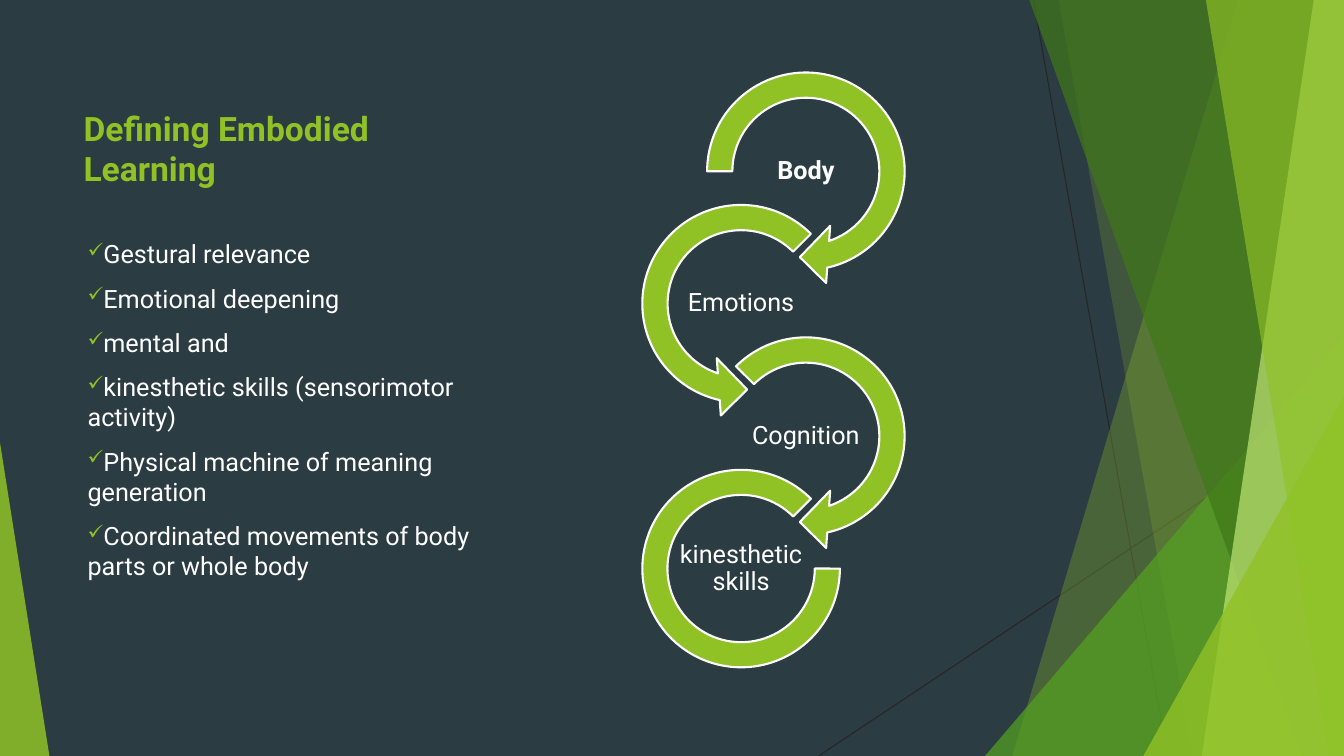
from dataclasses import dataclass

from pptx import Presentation
from pptx.dml.color import RGBColor as RGB
from pptx.enum.shapes import MSO_CONNECTOR as Link, MSO_SHAPE as Kind
from pptx.enum.text import MSO_ANCHOR as Anchor, PP_ALIGN as Align
from pptx.oxml.ns import qn
from pptx.util import Inches, Pt
from lxml.etree import SubElement as Sub

WIDE, HIGH = Inches(13.33), Inches(7.5)
COL, ROW = WIDE / 100, HIGH / 100


@dataclass(frozen=True)
class Theme:
    """Colours and type sizes of the slide."""
    back: str = "2C3C43"
    lime: str = "90C226"
    leaf: str = "54A021"
    moss: str = "3F7819"
    pale: str = "C0E474"
    ink: str = "262626"
    white: str = "FFFFFF"
    font: str = "Roboto"
    head: int = 24
    text: int = 18


@dataclass(frozen=True)
class Box:
    """A rectangle in EMU."""
    x: float
    y: float
    w: float
    h: float

    def ints(self):
        """Return the four lengths as whole numbers."""
        return [round(v) for v in (self.x, self.y, self.w, self.h)]


THEME = Theme()


def grid(col, row, cols, rows):
    """Return the box covering part of the 100 by 100 slide grid."""
    return Box(col * COL, row * ROW, cols * COL, rows * ROW)


def paint(shape, color, alpha=100, edge=None):
    """Fill a shape, with optional transparency and outline."""
    shape.shadow.inherit = False
    shape.fill.solid()
    shape.fill.fore_color.rgb = RGB.from_string(color)
    if alpha < 100:
        tint = shape.fill._xPr.find(qn("a:solidFill"))[0]
        Sub(tint, qn("a:alpha"), val=str(alpha * 1000))
    if edge:
        shape.line.color.rgb = RGB.from_string(edge)
        shape.line.width = Pt(1.5)
    else:
        shape.line.fill.background()


def style(para, size, color, bold=False):
    """Set the font of a paragraph."""
    font = para.font
    font.name, font.size, font.bold = THEME.font, Pt(size), bold
    font.color.rgb = RGB.from_string(color)


def frame(slide, box, anchor, inset=None):
    """Add a wrapping text box and return its text frame."""
    area = slide.shapes.add_textbox(*box.ints()).text_frame
    area.word_wrap, area.vertical_anchor = True, anchor
    if inset is not None:
        area.margin_left = area.margin_right = inset
        area.margin_top = area.margin_bottom = inset
    return area


def ray(slide, box, start, end):
    """Draw a thin line between two points given as percent of a box."""
    ends = [round(v) for x, y in (start, end)
            for v in (box.x + box.w * x / 100, box.y + box.h * y / 100)]
    line = slide.shapes.add_connector(Link.STRAIGHT, *ends)
    line.line.color.rgb = RGB.from_string(THEME.ink)
    line.line.width = Pt(0.75)
    Sub(line._element.spPr, qn("a:effectLst"))


def shard(slide, box, top, foot, color, alpha):
    """Fill a box to the right of a slanting edge."""
    points = [(round(box.x + box.w * x / 100), round(box.y + box.h * y))
              for x, y in ((top, 0), (100, 0), (100, 1), (foot, 1))]
    path = slide.shapes.build_freeform(*points[0], scale=1.0)
    path.add_line_segments(points[1:], close=True)
    paint(path.convert_to_shape(), color, alpha)


def wedge(slide, box, left, right, top, peak, color, alpha):
    """Stand a right triangle on the foot of a box."""
    part = Box(box.x + box.w * left / 100, box.y + box.h * top / 100,
               box.w * (right - left) / 100, box.h * (100 - top) / 100)
    shape = slide.shapes.add_shape(Kind.ISOSCELES_TRIANGLE, *part.ints())
    shape.adjustments[0] = peak
    paint(shape, color, alpha)


def facets(slide, box):
    """Draw the faceted backdrop from back to front."""
    ray(slide, box, (76.9, 0), (86.87, 100))
    ray(slide, box, (100, 53.73), (60.9, 100))
    shard(slide, box, 92.12, 75.32, THEME.lime, 30)
    shard(slide, box, 78.77, 88.75, THEME.lime, 20)
    wedge(slide, box, 73.29, 100, 44.4, 1, THEME.leaf, 72)
    shard(slide, box, 76.59, 96.85, THEME.moss, 70)
    shard(slide, box, 97.75, 89.42, THEME.pale, 70)
    shard(slide, box, 89.72, 98.87, THEME.lime, 65)
    wedge(slide, box, 85.07, 100, 52.4, 1, THEME.lime, 80)
    wedge(slide, box, 0, 3.68, 58.53, 0, THEME.lime, 85)


def title(slide, box, words):
    """Write the heading on the foot of a box."""
    para = frame(slide, box, Anchor.BOTTOM).paragraphs[0]
    para.text = words
    style(para, THEME.head, THEME.lime, True)


def checks(slide, box, items):
    """Write a list with tick bullets."""
    area = frame(slide, box, Anchor.TOP)
    for i, item in enumerate(items):
        para = area.add_paragraph() if i else area.paragraphs[0]
        para.text = item
        para.space_before = Pt(10 if i else 0)
        props = para._p.get_or_add_pPr()
        tint = Sub(props, qn("a:buClr"))
        Sub(tint, qn("a:srgbClr"), val=THEME.lime)
        Sub(props, qn("a:buSzPct"), val="80000")
        Sub(props, qn("a:buChar"), char="✓")
        style(para, THEME.text, THEME.white)


def chain(slide, box, links):
    """Draw a zigzag chain of labelled rings down a box."""
    ring = box.w * 0.78
    step = (box.h - ring) / (len(links) - 1)
    for i, (label, kind, share, turns, bold) in enumerate(links):
        midx = box.x + (ring / 2 if i % 2 else box.w - ring / 2)
        midy = box.y + ring / 2 + i * step
        size = ring * share
        part = Box(midx - size / 2, midy - size / 2, size, size)
        shape = slide.shapes.add_shape(kind, *part.ints())
        for j, turn in enumerate(turns):
            shape.adjustments[j] = turn
        paint(shape, THEME.lime, edge=THEME.white)
        wide, high = ring * 0.56, ring * 0.28
        spot = Box(midx - wide / 2, midy - high / 2, wide, high)
        para = frame(slide, spot, Anchor.MIDDLE, Inches(0.01)).paragraphs[0]
        para.text, para.alignment, para.line_spacing = label, Align.CENTER, 0.9
        style(para, THEME.text, THEME.white, bold)


def main():
    """Build and save the slide."""
    deck = Presentation()
    deck.slide_width, deck.slide_height = WIDE, HIGH
    slide = deck.slides.add_slide(deck.slide_layouts[6])
    slide.background.fill.solid()
    slide.background.fill.fore_color.rgb = RGB.from_string(THEME.back)
    facets(slide, grid(0, 0, 100, 100))
    title(slide, grid(5.48, 6.93, 31.66, 18.67), "Defining Embodied Learning")
    chain(slide, grid(46.6, 7.47, 21.91, 82.93), [
        ("Body", Kind.CIRCULAR_ARROW, 1, (0.11, 11.42, 45, 108, 0.125), True),
        ("Emotions", Kind.LEFT_CIRCULAR_ARROW, 1,
         (0.11, 11.42, 63, 189, 0.125), False),
        ("Cognition", Kind.CIRCULAR_ARROW, 1,
         (0.11, 11.42, 45, 135, 0.125), False),
        ("kinesthetic skills", Kind.BLOCK_ARC, 0.86, (0, 189, 0.127), False),
    ])
    checks(slide, grid(5.78, 30.93, 31.66, 47.6), [
        "Gestural relevance",
        "Emotional deepening",
        "mental and",
        "kinesthetic skills (sensorimotor activity)",
        "Physical machine of meaning generation",
        "Coordinated movements of body parts or whole body",
    ])
    deck.save("out.pptx")


if __name__ == "__main__":
    main()
